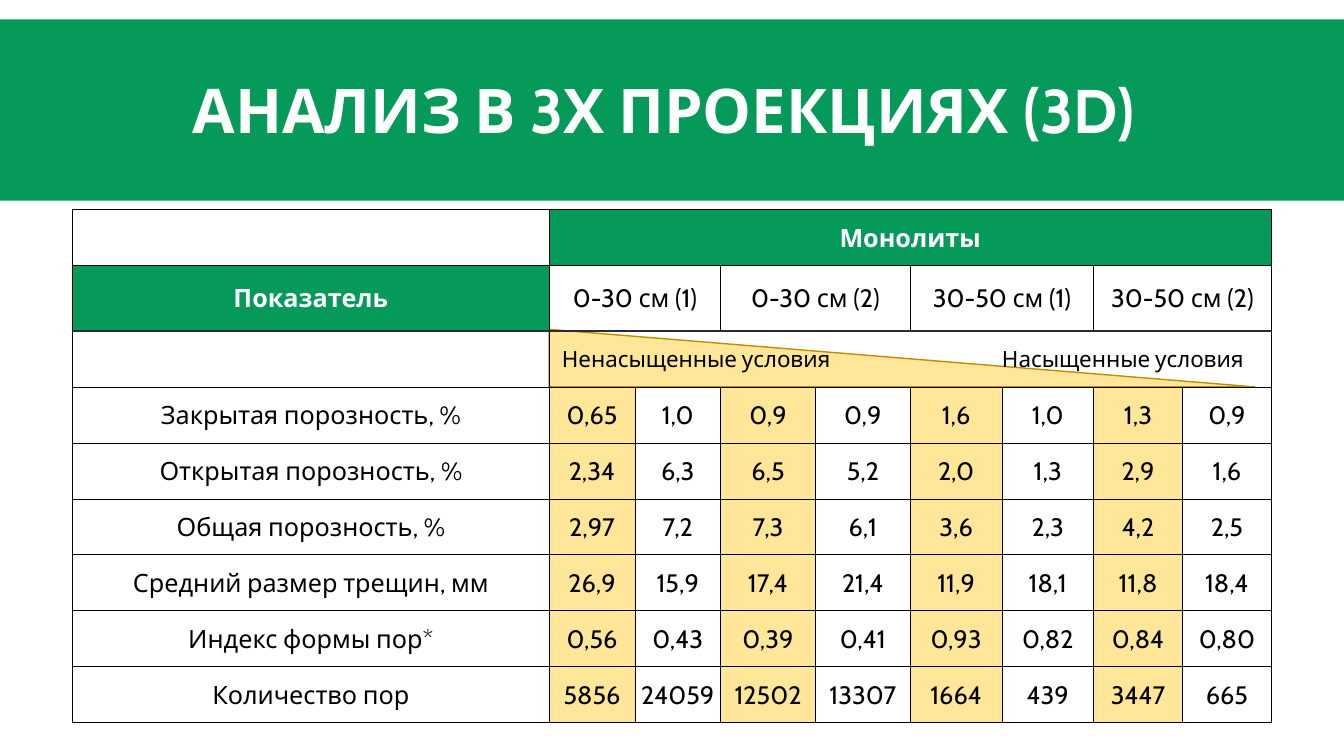
import pptx
import pptx.util
import pptx.dml.color
import pptx.enum.shapes
import pptx.enum.text
import pptx.oxml.ns
import lxml.etree

Cm = pptx.util.Cm
Pt = pptx.util.Pt
RGBColor = pptx.dml.color.RGBColor
ALIGN = pptx.enum.text.PP_ALIGN
MIDDLE = pptx.enum.text.MSO_ANCHOR.MIDDLE
SHAPE = pptx.enum.shapes.MSO_SHAPE

TITLE = "АНАЛИЗ В 3Х ПРОЕКЦИЯХ (3D)"
HEAD = "Монолиты"
LABEL = "Показатель"
DEPTHS = ["0-30 см (1)", "0-30 см (2)", "30-50 см (1)", "30-50 см (2)"]
STATES = ["Ненасыщенные условия", "Насыщенные условия"]
DATA = [
    ("Закрытая порозность, %", "0,65", "1,0", "0,9", "0,9", "1,6", "1,0", "1,3", "0,9"),
    ("Открытая порозность, %", "2,34", "6,3", "6,5", "5,2", "2,0", "1,3", "2,9", "1,6"),
    ("Общая порозность, %", "2,97", "7,2", "7,3", "6,1", "3,6", "2,3", "4,2", "2,5"),
    ("Средний размер трещин, мм", "26,9", "15,9", "17,4", "21,4", "11,9", "18,1", "11,8", "18,4"),
    ("Индекс формы пор*", "0,56", "0,43", "0,39", "0,41", "0,93", "0,82", "0,84", "0,80"),
    ("Количество пор", "5856", "24059", "12502", "13307", "1664", "439", "3447", "665"),
]
PAIRS = [2.16, 2.39, 2.31, 2.24]
COLS = [12.01] + [wide for wide in PAIRS for _ in range(2)]
ROWS = [1.41, 1.65] + [1.41] * (1 + len(DATA))
LEFT, TOP = 1.83, 5.28

FONT = "Cabin"
GREEN = RGBColor(0x05, 0x99, 0x5A)
YELLOW = RGBColor(0xFF, 0xE6, 0x99)
GOLD = RGBColor(0xBD, 0x8E, 0x00)
WHITE = RGBColor(0xFF, 0xFF, 0xFF)
BLACK = RGBColor(0x00, 0x00, 0x00)
GREY = RGBColor(0x2C, 0x2C, 0x2C)


def add_node(owner, tag, **attrs):
    return lxml.etree.SubElement(owner, pptx.oxml.ns.qn(tag), **attrs)


def add_block(slide, kind, box, color):
    block = slide.shapes.add_shape(kind, *map(Cm, box))
    block.shadow.inherit = False
    block.fill.solid()
    block.fill.fore_color.rgb = color
    block.line.fill.background()
    return block


def style_text(para, size, color, bold):
    para.alignment = ALIGN.CENTER
    para.font.name = FONT
    para.font.size = Pt(size)
    para.font.bold = bold
    para.font.color.rgb = color


def set_edges(cell, row):
    props = cell._tc.get_or_add_tcPr()
    for spot, side in enumerate("LRTB"):
        heavy = (row, side) in ((1, "B"), (2, "T"))
        line = add_node(props, "a:ln" + side, w=str(Pt(1 if heavy else 0.5)))
        fill = add_node(line, "a:solidFill")
        add_node(fill, "a:srgbClr", val=str(GREY if heavy else BLACK))
        props.insert(spot, line)


def set_cell(cell, row, col, text):
    head = text in (HEAD, LABEL)
    cell.margin_left = cell.margin_right = cell.margin_top = Cm(0.03)
    cell.margin_bottom = 0
    cell.vertical_anchor = MIDDLE
    if head or (row > 2 and col % 2):
        cell.fill.solid()
        cell.fill.fore_color.rgb = GREEN if head else YELLOW
    else:
        cell.fill.background()
    cell.text = text
    style_text(cell.text_frame.paragraphs[0], 18, WHITE if head else BLACK, head)
    if not cell.is_spanned:
        set_edges(cell, row)


def set_states(cell):
    cell.margin_left = Cm(0.32)
    para = cell.text_frame.paragraphs[0]
    para.alignment = ALIGN.LEFT
    para.font.size = Pt(16)
    props = para._p.get_or_add_pPr()
    tabs = lxml.etree.Element(pptx.oxml.ns.qn("a:tabLst"))
    add_node(tabs, "a:tab", pos=str(Cm(11.09)), algn="l")
    props.insert(0, tabs)


def add_grid(slide):
    box = LEFT, TOP, sum(COLS), sum(ROWS)
    frame = slide.shapes.add_table(len(ROWS), len(COLS), *map(Cm, box))
    table = frame.table
    table.first_row = table.horz_banding = False
    for part, wide in zip(table.columns, COLS):
        part.width = Cm(wide)
    for part, high in zip(table.rows, ROWS):
        part.height = Cm(high)
    last = len(COLS) - 1
    for row in (0, 2):
        table.cell(row, 1).merge(table.cell(row, last))
    for col in range(1, last, 2):
        table.cell(1, col).merge(table.cell(1, col + 1))
    depths = [text for name in DEPTHS for text in (name, "")]
    blank = [""] * (last - 1)
    lines = [["", HEAD] + blank, [LABEL] + depths, ["", "\t".join(STATES)] + blank] + DATA
    for row, line in enumerate(lines):
        for col, text in enumerate(line):
            set_cell(table.cell(row, col), row, col, text)
    set_states(table.cell(2, 1))


def add_title(slide):
    box = slide.shapes.add_textbox(*map(Cm, (2.34, 0.79, 28.78, 4.19)))
    frame = box.text_frame
    frame.word_wrap = True
    frame.vertical_anchor = MIDDLE
    para = frame.paragraphs[0]
    para.text = TITLE
    para.line_spacing = 0.85
    style_text(para, 44, WHITE, True)


def main():
    deck = pptx.Presentation()
    deck.slide_width, deck.slide_height = Cm(33.87), Cm(19.05)
    slide = deck.slides.add_slide(deck.slide_layouts[6])
    add_block(slide, SHAPE.RECTANGLE, (0, 0.49, 33.87, 4.57), GREEN)
    wedge = LEFT + COLS[0], TOP + sum(ROWS[:2]) - 0.04, 17.78, 1.45
    slope = add_block(slide, SHAPE.RIGHT_TRIANGLE, wedge, YELLOW)
    slope.line.color.rgb = GOLD
    slope.line.width = Pt(1)
    add_grid(slide)
    add_title(slide)
    deck.save("out.pptx")


if __name__ == "__main__":
    main()
